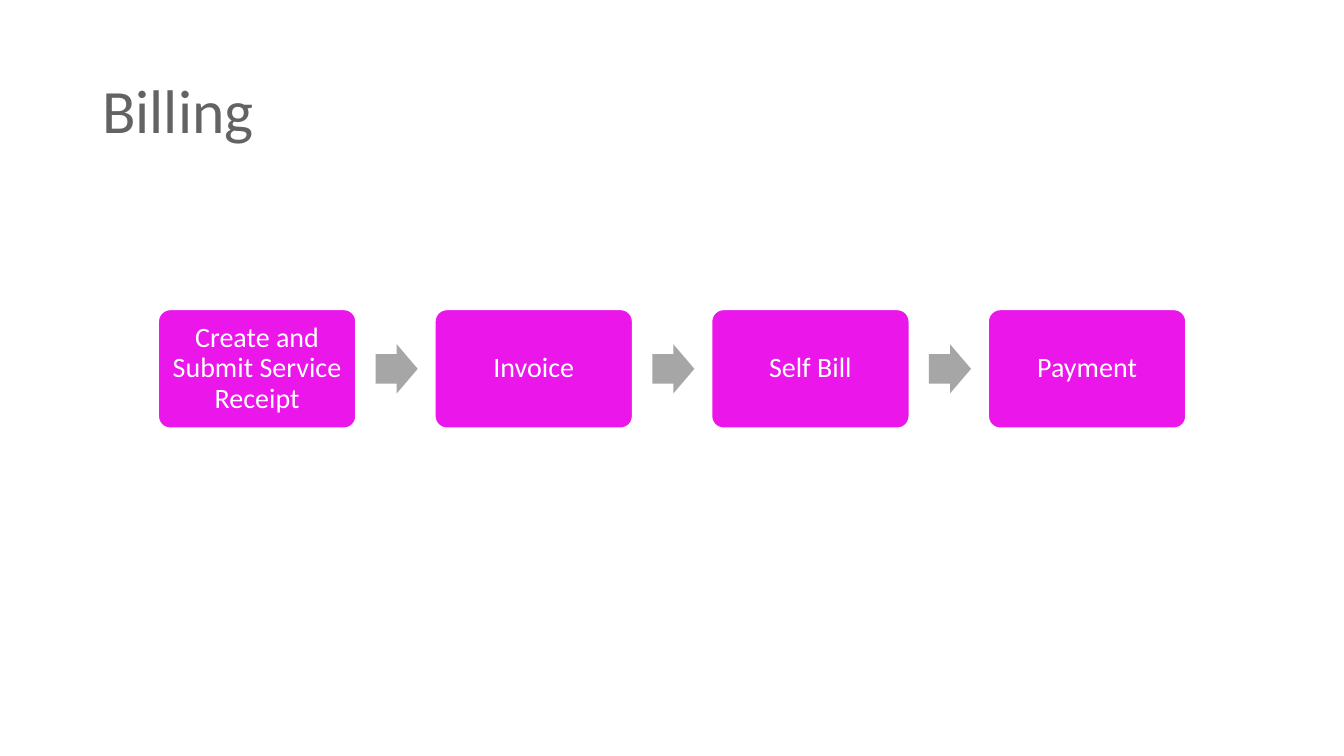
from dataclasses import dataclass

from pptx import Presentation
from pptx.dml.color import RGBColor
from pptx.enum.shapes import MSO_SHAPE as Preset
from pptx.enum.text import MSO_ANCHOR as Anchor, PP_ALIGN as Align
from pptx.util import Cm, Pt

HEADING = "Billing"
STEPS = ["Create and Submit Service Receipt", "Invoice", "Self Bill", "Payment"]


@dataclass(frozen=True)
class Theme:
    font: str = "Calibri"
    heading_size: int = 44
    step_size: int = 20
    heading: str = "646363"
    step: str = "EA16EA"
    on_step: str = "FFFFFF"
    arrow: str = "A6A6A6"


THEME = Theme()

# Lengths in centimetres
SLIDE_W, SLIDE_H = 33.87, 19.05
STEP_W, STEP_H = 4.98, 2.99
ARROW_W, ARROW_H = 1.06, 1.24
FLOW_LEFT, FLOW_TOP = 3.99, 7.8
PITCH = 1.4 * STEP_W
ARROW_GAP = 0.1 * STEP_W
INSET = 0.2


def write(frame, words, size, color, align):
    """Put one vertically centred paragraph into a text frame."""
    frame.word_wrap = True
    frame.vertical_anchor = Anchor.MIDDLE
    line = frame.paragraphs[0]
    line.alignment = align
    line.line_spacing = 0.9
    run = line.add_run()
    run.text = words
    run.font.name = THEME.font
    run.font.size = Pt(size)
    run.font.color.rgb = RGBColor.from_string(color)


def add_preset(slide, preset, box, fill, adjustments):
    shape = slide.shapes.add_shape(preset, *(Cm(length) for length in box))
    shape.shadow.inherit = False
    shape.fill.solid()
    shape.fill.fore_color.rgb = RGBColor.from_string(fill)
    shape.line.fill.background()
    for index, value in enumerate(adjustments):
        shape.adjustments[index] = value
    return shape


def add_step(slide, left, label):
    step = add_preset(slide, Preset.ROUNDED_RECTANGLE,
                      (left, FLOW_TOP, STEP_W, STEP_H), THEME.step, [0.1])
    step.line.color.rgb = RGBColor.from_string(THEME.on_step)
    step.line.width = Pt(1)
    frame = step.text_frame
    frame.margin_left = frame.margin_right = Cm(INSET)
    frame.margin_top = frame.margin_bottom = Cm(INSET)
    write(frame, label, THEME.step_size, THEME.on_step, Align.CENTER)


def main():
    deck = Presentation()
    deck.slide_width, deck.slide_height = Cm(SLIDE_W), Cm(SLIDE_H)
    slide = deck.slides.add_slide(deck.slide_layouts[6])

    heading = slide.shapes.add_textbox(Cm(2.33), Cm(1.01), Cm(29.21), Cm(3.68))
    write(heading.text_frame, HEADING, THEME.heading_size, THEME.heading, Align.LEFT)

    arrow_top = FLOW_TOP + (STEP_H - ARROW_H) / 2
    for index, label in enumerate(STEPS):
        left = FLOW_LEFT + index * PITCH
        add_step(slide, left, label)
        if index < len(STEPS) - 1:
            arrow_left = left + STEP_W + ARROW_GAP
            add_preset(slide, Preset.RIGHT_ARROW,
                       (arrow_left, arrow_top, ARROW_W, ARROW_H),
                       THEME.arrow, [0.6, 0.5])

    deck.save("out.pptx")


if __name__ == "__main__":
    main()
